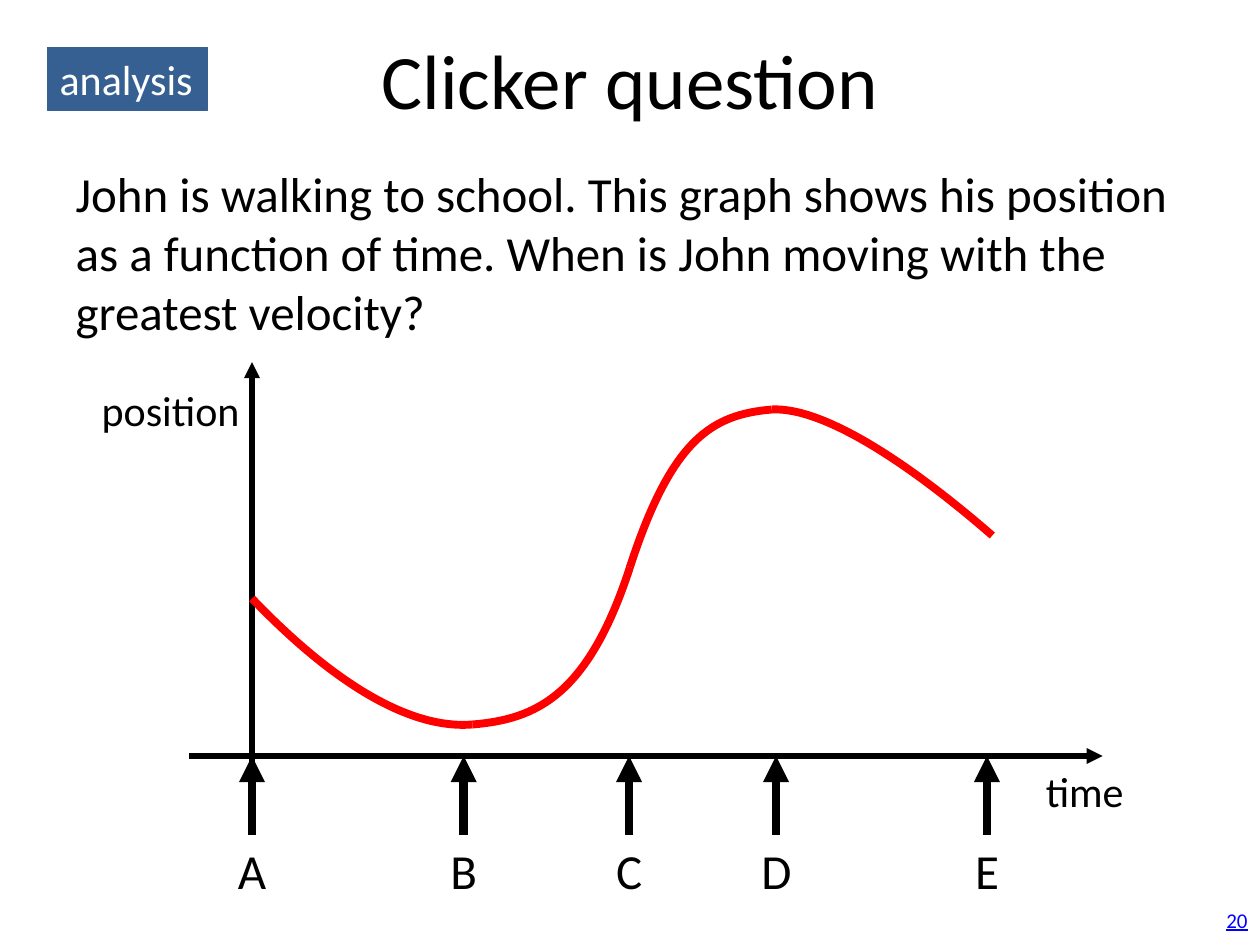
from pptx import Presentation
from pptx.dml.color import RGBColor
from pptx.enum import shapes as sh, text as tx
from pptx.oxml.ns import qn
from pptx.util import Pt
from lxml import etree

# Content
TITLE = "Clicker question"
BODY = ("John is walking to school. This graph shows his position as a "
        "function of time. When is John moving with the greatest velocity?")
TAG, PAGE = "analysis", "20"
MARKS = {"A": 144, "B": 265, "C": 359.5, "D": 443.5, "E": 564}
AXES = [((108, 432), (630, 432)), ((144, 459), (144, 207))]
NAMES = [("time", (590.5, 434, 60, 36), "LEFT"),
         ("position", (49.5, 216, 94.5, 36), "RIGHT")]
# Each curve: start, two control points, end
CURVES = [
    [(144, 342), (190, 390), (234, 417), (270, 414)],
    [(270, 414), (306, 411), (336, 398), (360, 324)],
    [(360, 324), (384, 250.5), (407, 237), (441, 234)],
    [(441, 234), (471, 232.5), (520.5, 265.5), (567, 306)],
]
HEX = {"ink": "000000", "curve": "FF0000", "link": "0000FF",
       "tag": "376092", "white": "FFFFFF"}
BASE = 432    # height of the time axis
TAIL = 477    # lower end of the marker arrows


def rgb(name):
    return RGBColor.from_string(HEX[name])


def place(shape, box):
    shape.left, shape.top, shape.width, shape.height = map(Pt, box)


def write(shape, words, size=24, color="ink", align="LEFT", anchor="TOP",
          wrap=False, line=False):
    frame = shape.text_frame
    frame.word_wrap = wrap
    frame.vertical_anchor = getattr(tx.MSO_ANCHOR, anchor)
    para = frame.paragraphs[0]
    para.alignment = getattr(tx.PP_ALIGN, align)
    run = para.add_run()
    run.text = words
    font = run.font
    font.name, font.size, font.underline = "Calibri", Pt(size), line
    font.color.rgb = rgb(color)
    return para


def label(slide, words, box, **form):
    note = slide.shapes.add_textbox(*map(Pt, box))
    write(note, words, **form)


def arrow(slide, start, end, width):
    line = slide.shapes.add_connector(
        sh.MSO_CONNECTOR.STRAIGHT, *map(Pt, start + end))
    line.line.color.rgb = rgb("ink")
    line.line.width = Pt(width)
    etree.SubElement(line.line._get_or_add_ln(), qn("a:tailEnd"),
                     type="triangle")
    etree.SubElement(line._element.spPr, qn("a:effectLst"))


def curve(slide, points):
    first, *rest = [tuple(map(Pt, p)) for p in points]
    pen = slide.shapes.build_freeform(*first, scale=1.0)
    pen.add_line_segments(rest, close=False)
    shape = pen.convert_to_shape()
    # Turn the three straight steps into one Bezier segment
    steps = list(shape._element.iter(qn("a:lnTo")))
    bend = etree.Element(qn("a:cubicBezTo"))
    steps[0].addprevious(bend)
    for step in steps:
        bend.append(step[0])
        step.getparent().remove(step)
    shape.shadow.inherit = False
    shape.fill.background()
    shape.line.color.rgb = rgb("curve")
    shape.line.width = Pt(4.5)


def main():
    deck = Presentation()
    deck.slide_width, deck.slide_height = Pt(720), Pt(540)
    slide = deck.slides.add_slide(deck.slide_layouts[1])

    # Title and question
    title, body = slide.placeholders[0], slide.placeholders[1]
    place(title, (36, 0, 648, 90))
    write(title, TITLE, size=44, align="CENTER", anchor="MIDDLE", wrap=True)
    place(body, (36, 90, 648, 396))
    props = write(body, BODY, size=28, wrap=True)._p.get_or_add_pPr()
    props.set("marL", "0")
    props.set("indent", "0")
    etree.SubElement(props, qn("a:buNone"))

    # Page number
    label(slide, PAGE, (552, 511, 168, 29), size=12, color="link",
          align="RIGHT", anchor="MIDDLE", wrap=True, line=True)

    # Graph
    for start, end in AXES:
        arrow(slide, start, end, 3)
    for words, box, align in NAMES:
        label(slide, words, box, align=align)
    for points in CURVES:
        curve(slide, points)

    # Answer markers
    for words, x in MARKS.items():
        label(slide, words, (x - 15.5, TAIL, 31, 41), size=28, align="CENTER")
        arrow(slide, (x, TAIL), (x, BASE), 5)

    # Tag
    tag = slide.shapes.add_shape(sh.MSO_SHAPE.RECTANGLE,
                                 *map(Pt, (27, 27, 91.5, 36)))
    tag.shadow.inherit = False
    tag.fill.solid()
    tag.fill.fore_color.rgb = tag.line.color.rgb = rgb("tag")
    tag.line.width = Pt(0.75)
    write(tag, TAG, color="white")

    deck.save("out.pptx")


if __name__ == "__main__":
    main()
